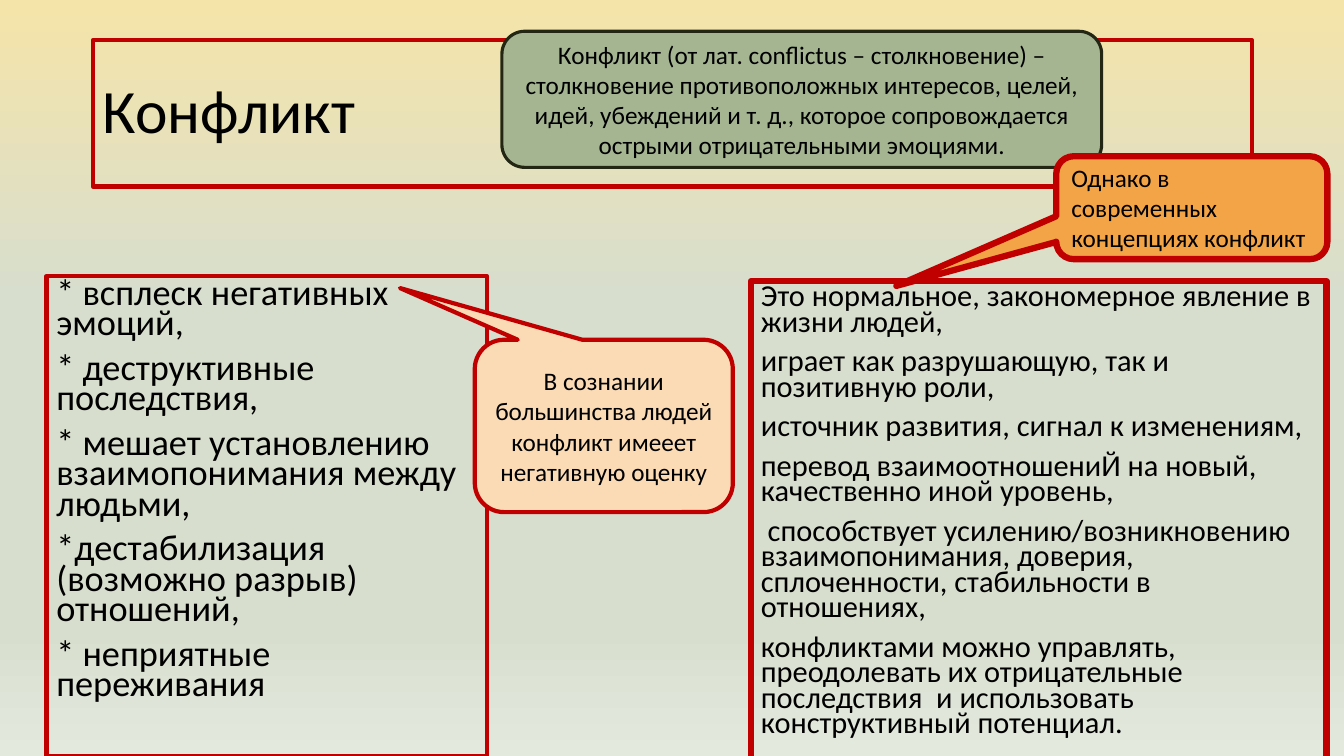
from pptx import Presentation
from pptx.dml.color import RGBColor as Rgb
from pptx.enum.shapes import MSO_SHAPE as Kind
from pptx.enum.text import MSO_ANCHOR as Anchor, PP_ALIGN as Align
from pptx.oxml import parse_xml
from pptx.oxml.ns import nsdecls, qn
from pptx.util import Inches, Pt

COLORS = {
    "ink": "000000", "red": "C00000", "dark": "222613",
    "sage": "A5B592", "peach": "FADBB5", "orange": "F3A447",
    "sand": "F5E4A9", "mist": "D7DECE", "pale": "E4E9DE",
}
BODY = {"line_spacing": 0.7, "space_before": Pt(10)}
MID = {"alignment": Align.CENTER}


def color(name):
    return Rgb.from_string(COLORS[name])


def apply(target, values):
    for name, value in values.items():
        setattr(target, name, value)


class Board:
    cols, rows = 64, 36
    font = "Calibri"

    def __init__(self, deck):
        self.wide = deck.slide_width / self.cols
        self.high = deck.slide_height / self.rows
        self.slide = deck.slides.add_slide(deck.slide_layouts[6])

    def shade(self, stops):
        fill = self.slide.background.fill
        fill.gradient()
        fill.gradient_angle = 270
        ramp = next(self.slide.element.iter(qn("a:gsLst")))
        for stop in list(ramp):
            ramp.remove(stop)
        for share, name in stops:
            ramp.append(parse_xml(
                f'<a:gs {nsdecls("a")} pos="{share * 1000}">'
                f'<a:srgbClr val="{COLORS[name]}"/></a:gs>'))

    def shape(self, kind, place, edge, width, fill=None):
        left, top, span, drop = place
        item = self.slide.shapes.add_shape(
            kind, round(left * self.wide), round(top * self.high),
            round(span * self.wide), round(drop * self.high))
        item.shadow.inherit = False
        if fill:
            item.fill.solid()
            item.fill.fore_color.rgb = color(fill)
        else:
            item.fill.background()
        item.line.color.rgb = color(edge)
        item.line.width = Pt(width)
        return item

    def label(self, item, lines, size, anchor, look):
        frame = item.text_frame
        apply(frame, {"word_wrap": True, "vertical_anchor": anchor})
        for num, line in enumerate(lines):
            para = frame.add_paragraph() if num else frame.paragraphs[0]
            apply(para, {"alignment": Align.LEFT, **look})
            run = para.add_run()
            run.text = line
            apply(run.font, {"size": Pt(size), "name": self.font})
            run.font.color.rgb = color("ink")

    def panel(self, place, width, lines, size, anchor=Anchor.TOP, look=BODY):
        item = self.shape(Kind.RECTANGLE, place, "red", width)
        self.label(item, lines, size, anchor, look)

    def card(self, place, edge, width, fill, text):
        item = self.shape(Kind.ROUNDED_RECTANGLE, place, edge, width, fill)
        self.label(item, [text], 18, Anchor.MIDDLE, MID)

    def callout(self, place, tip, width, fill, lines, look):
        item = self.shape(Kind.ROUNDED_RECTANGULAR_CALLOUT, place,
                          "red", width, fill)
        for num, value in enumerate(tip):
            item.adjustments[num] = value
        self.label(item, lines, 18, Anchor.MIDDLE, look)


def main():
    deck = Presentation()
    apply(deck, {"slide_width": Inches(13.33), "slide_height": Inches(7.5)})
    board = Board(deck)
    board.shade([(0, "sand"), (40, "mist"), (83, "mist"), (100, "pale")])

    board.panel((4.42, 1.92, 55.2, 6.96), 3, ["Конфликт"], 44,
                Anchor.MIDDLE, {"line_spacing": 0.9})
    board.panel((2.21, 13.15, 20.98, 22.85), 3, [
        "* всплеск негативных эмоций,",
        "* деструктивные последствия,",
        "* мешает установлению взаимопонимания между людьми,",
        "*дестабилизация (возможно разрыв) отношений,",
        "* неприятные переживания",
    ], 25.9)
    board.card((23.9, 1.49, 28.56, 6.48), "dark", 2.25, "sage",
               "Конфликт (от лат. сonflictus – столкновение) – столкновение "
               "противоположных интересов, целей, идей, убеждений и т. д., "
               "которое сопровождается острыми отрицательными эмоциями.")
    board.callout((22.61, 16.18, 12.29, 8.21), (-0.79, -0.8, 0.17), 3, "peach",
                  ["В сознании большинства людей конфликт имееет "
                   "негативную оценку"], MID)
    board.callout((50.3, 7.44, 12.91, 4.9), (-1.09, 0.76, 0.17), 4.5, "orange",
                  ["Однако в современных", "концепциях конфликт"], {})
    board.panel((35.76, 13.39, 27.41, 22.85), 4.5, [
        "Это нормальное, закономерное явление в жизни людей,",
        "играет как разрушающую, так и позитивную роли,",
        "источник развития, сигнал к изменениям,",
        "перевод взаимоотношениЙ на новый, качественно иной уровень,",
        " способствует усилению/возникновению взаимопонимания, доверия,  "
        "сплоченности, стабильности в отношениях,",
        "конфликтами можно управлять, преодолевать их отрицательные "
        "последствия  и использовать конструктивный потенциал.",
    ], 21.7)
    deck.save("out.pptx")


if __name__ == "__main__":
    main()
